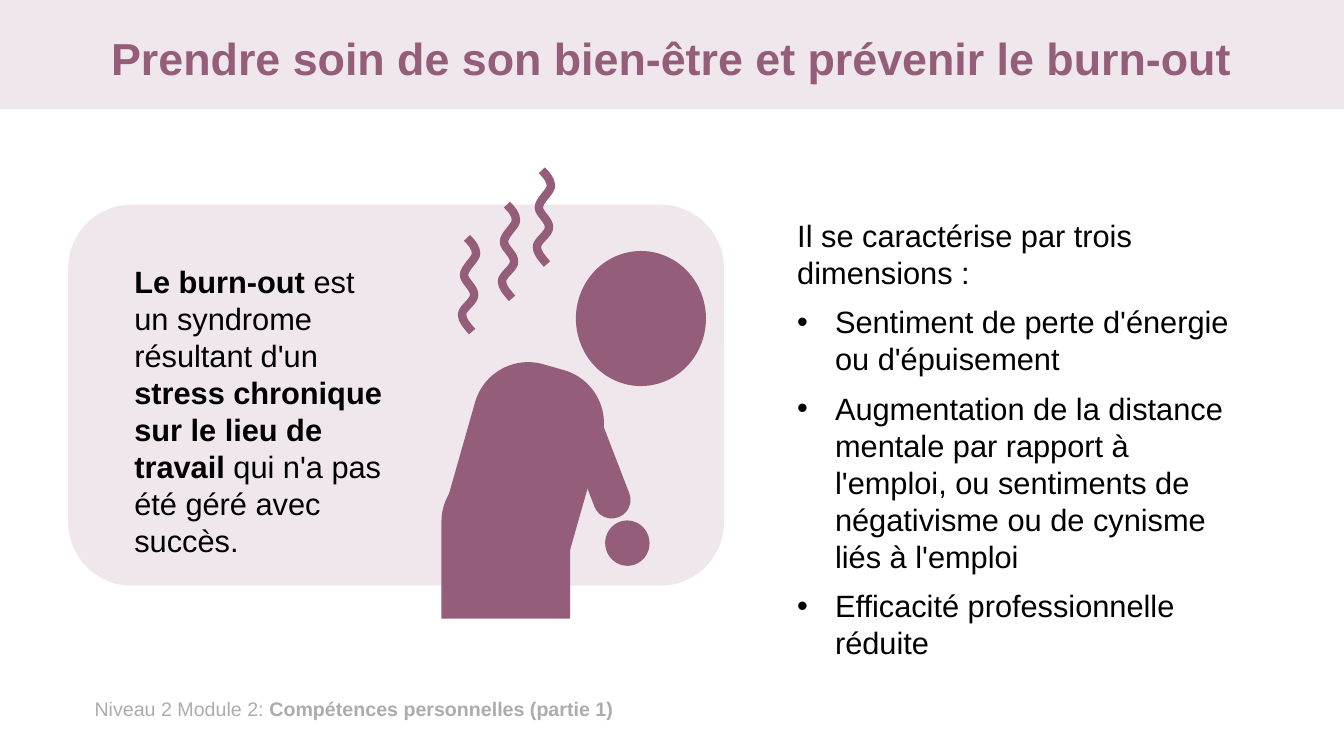
import pptx
import pptx.dml.color
import pptx.enum.shapes
import pptx.enum.text
import pptx.oxml
import pptx.oxml.ns
import pptx.util

PLUM = pptx.dml.color.RGBColor(0x94, 0x5E, 0x7A)
PALE_PINK = pptx.dml.color.RGBColor(0xF0, 0xE7, 0xEC)
GREY = pptx.dml.color.RGBColor(0xAE, 0xAB, 0xAB)
BLACK = pptx.dml.color.RGBColor(0, 0, 0)

SHAPES = pptx.enum.shapes.MSO_SHAPE
ANCHOR = pptx.enum.text.MSO_ANCHOR
AUTO_SIZE = pptx.enum.text.MSO_AUTO_SIZE
ALIGN = pptx.enum.text.PP_ALIGN

TITLE = "Prendre soin de son bien-être et prévenir le burn-out"
FOOTER = [("Niveau 2 Module 2: ", False), ("Compétences personnelles (partie 1)", True)]
DEFINITION = [
    ("Le burn-out ", True),
    ("est un syndrome résultant d'un ", False),
    ("stress chronique sur le lieu de travail ", True),
    ("qui n'a pas été géré avec succès.", False),
]
DIMENSIONS_INTRO = "Il se caractérise par trois dimensions :"
DIMENSIONS = [
    "Sentiment de perte d'énergie ou d'épuisement",
    "Augmentation de la distance mentale par rapport à l'emploi, "
    "ou sentiments de négativisme ou de cynisme liés à l'emploi",
    "Efficacité professionnelle réduite",
]

# Preset, box, rotation and corner adjustments of each body part
FIGURE = [
    (SHAPES.ROUND_2_SAME_RECTANGLE, (34.5, 48.13, 9.81, 23.2), 15.9, (0.419, 0)),
    (SHAPES.OVAL, (42.85, 33.2, 9.68, 17.87), 0, ()),
    (SHAPES.ROUND_2_SAME_RECTANGLE, (43.05, 53.33, 2.78, 15.6), 158.9, (0.493, 0)),
    (SHAPES.OVAL, (45.03, 68.85, 3.3, 6), 351.8, ()),
    (SHAPES.ROUND_2_SAME_RECTANGLE, (32.85, 61.85, 9.58, 20), 0, (0.419, 0)),
]
WAVE_STARTS = [(38.1, 39.47), (40.7, 34.93), (35.13, 43.87)]
# Bézier points relative to the foot of a wave
WAVE = [
    (0, 0), (-0.38, -0.8), (-0.75, -1.47), (-0.75, -2.27),
    (-0.75, -3.07), (0.15, -4), (0.15, -4.8),
    (0.22, -5.73), (-0.6, -6.67), (-0.6, -7.47),
    (-0.6, -8.4), (0.22, -9.47), (0.3, -10.27),
    (0.3, -11.07), (0, -11.73), (-0.38, -12.4),
]


def set_attributes(target, values):
    for name, value in values.items():
        setattr(target, name, value)


def bend_segments(freeform):
    """Turn each three straight segments into one cubic Bézier curve."""
    segments = list(freeform.element.iter(pptx.oxml.ns.qn("a:lnTo")))
    for first in range(0, len(segments), 3):
        curve = pptx.oxml.parse_xml(f'<a:cubicBezTo {pptx.oxml.ns.nsdecls("a")}/>')
        segments[first].addprevious(curve)
        for segment in segments[first:first + 3]:
            curve.append(segment[0])
            segment.getparent().remove(segment)


class SlideBuilder:
    """Places elements on a grid of 100 columns by 100 rows."""

    font_name = "Arial"

    def __init__(self, presentation):
        self.column = presentation.slide_width / 100
        self.row = presentation.slide_height / 100
        self.slide = presentation.slides.add_slide(presentation.slide_layouts[5])

    def box(self, left, top, width, height):
        return (round(left * self.column), round(top * self.row),
                round(width * self.column), round(height * self.row))

    def shape(self, preset, box, color, rotation=0, adjustments=(), group=None):
        parent = group or self.slide
        shape = parent.shapes.add_shape(preset, *self.box(*box))
        shape.shadow.inherit = False
        shape.fill.solid()
        shape.fill.fore_color.rgb = color
        shape.line.fill.background()
        shape.rotation = rotation
        for index, value in enumerate(adjustments):
            shape.adjustments[index] = value
        return shape

    def runs(self, paragraph, pieces, size, color):
        for text, bold in pieces:
            run = paragraph.add_run()
            run.text = text
            set_attributes(run.font, {
                "name": self.font_name, "size": pptx.util.Pt(size), "bold": bold})
            run.font.color.rgb = color

    def title(self, text, box):
        title = self.slide.shapes.title
        set_attributes(title, dict(zip(("left", "top", "width", "height"), self.box(*box))))
        set_attributes(title.text_frame, {
            "word_wrap": True, "auto_size": AUTO_SIZE.NONE, "vertical_anchor": ANCHOR.MIDDLE})
        paragraph = title.text_frame.paragraphs[0]
        set_attributes(paragraph, {"alignment": ALIGN.CENTER, "line_spacing": 0.9})
        self.runs(paragraph, [(text, True)], 32, PLUM)
        return title

    def text(self, box, pieces, size=22, color=BLACK, auto_size=AUTO_SIZE.NONE):
        frame = self.slide.shapes.add_textbox(*self.box(*box)).text_frame
        set_attributes(frame, {"word_wrap": True, "auto_size": auto_size})
        self.runs(frame.paragraphs[0], pieces, size, color)
        return frame

    def bullet(self, frame, text, size=22):
        paragraph = frame.add_paragraph()
        paragraph.space_before = pptx.util.Pt(9)
        self.runs(paragraph, [(text, False)], size, BLACK)
        properties = paragraph._p.get_or_add_pPr()
        indent = pptx.util.Pt(27)
        properties.set("marL", str(indent))
        properties.set("indent", str(-indent))
        namespace = pptx.oxml.ns.nsdecls("a")
        for markup in (f'<a:buClr {namespace}><a:srgbClr val="{BLACK}"/></a:buClr>',
                       f'<a:buFont {namespace} typeface="{self.font_name}"/>',
                       f'<a:buChar {namespace} char="•"/>'):
            properties.append(pptx.oxml.parse_xml(markup))

    def wave(self, left, top):
        points = [(round((left + x) * self.column), round((top + y) * self.row))
                  for x, y in WAVE]
        builder = self.slide.shapes.build_freeform(*points[0])
        builder.add_line_segments(points[1:], close=False)
        wave = builder.convert_to_shape()
        bend_segments(wave)
        wave.shadow.inherit = False
        wave.fill.background()
        wave.line.color.rgb = PLUM
        wave.line.width = pptx.util.Pt(6)


def main():
    presentation = pptx.Presentation()
    presentation.slide_width = pptx.util.Inches(13.333)
    presentation.slide_height = pptx.util.Inches(7.5)
    builder = SlideBuilder(presentation)

    band = builder.shape(SHAPES.RECTANGLE, (0, 0, 100, 14.4), PALE_PINK)
    title = builder.title(TITLE, (6.87, 1.73, 86.25, 12.67))
    title.element.addprevious(band.element)  # the band lies behind the title

    builder.text((6.3, 91.53, 85.13, 4.53), FOOTER, 14, GREY, AUTO_SIZE.SHAPE_TO_FIT_TEXT)
    builder.shape(SHAPES.ROUNDED_RECTANGLE, (5.07, 27.07, 48.8, 50.4), PALE_PINK,
                  adjustments=(0.167,))

    dimensions = builder.text((58.58, 28, 34.58, 47.2), [(DIMENSIONS_INTRO, False)])
    for dimension in DIMENSIONS:
        builder.bullet(dimensions, dimension)

    figure = builder.slide.shapes.add_group_shape()
    for preset, box, rotation, adjustments in FIGURE:
        builder.shape(preset, box, PLUM, rotation, adjustments, figure)
    for start in WAVE_STARTS:
        builder.wave(*start)

    builder.text((9.26, 34.13, 20.93, 47.2), DEFINITION)
    presentation.save("out.pptx")


if __name__ == "__main__":
    main()
